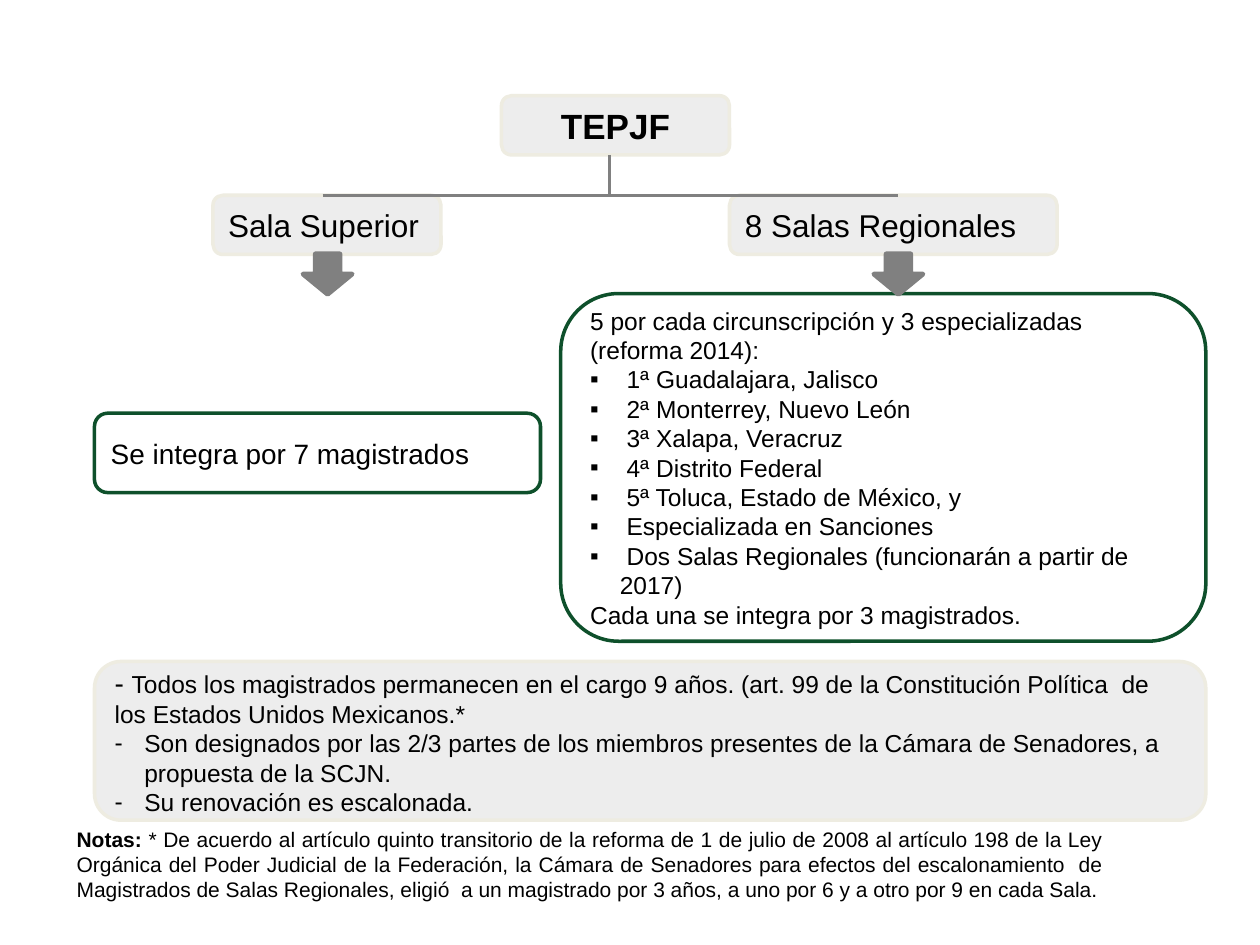
from lxml import etree
from pptx import Presentation
from pptx.dml.color import RGBColor
from pptx.enum.shapes import MSO_CONNECTOR, MSO_SHAPE
from pptx.enum.text import MSO_ANCHOR, PP_ALIGN
from pptx.oxml.ns import qn
from pptx.util import Inches, Pt

ROUNDED, ARROW = MSO_SHAPE.ROUNDED_RECTANGLE, MSO_SHAPE.RIGHT_ARROW
STRAIGHT = MSO_CONNECTOR.STRAIGHT
MIDDLE = MSO_ANCHOR.MIDDLE
LEFT, CENTER, JUSTIFY = PP_ALIGN.LEFT, PP_ALIGN.CENTER, PP_ALIGN.JUSTIFY
GRAY, PALE, CREAM, WHITE, GREEN = "808080", "DDDDDD", "EEECE1", "FFFFFF", "0E502B"

prs = Presentation()
prs.slide_width, prs.slide_height = Inches(10), Inches(7.5)
slide = prs.slides.add_slide(prs.slide_layouts[6])
COL, ROW = prs.slide_width / 100, prs.slide_height / 75
HANGING = int(2.36 * COL)


def rgb(code):
    return RGBColor.from_string(code)


def write(frame, paragraphs, size, align=LEFT):
    """Fill a frame with (bullet, runs) pairs; each run is (text, own font settings)."""
    frame.word_wrap = True
    for i, (bullet, runs) in enumerate(paragraphs):
        paragraph = frame.paragraphs[0] if i == 0 else frame.add_paragraph()
        paragraph.alignment = align
        if bullet:
            properties = paragraph._p.get_or_add_pPr()
            properties.set("marL", str(HANGING))
            properties.set("indent", str(-HANGING))
            etree.SubElement(properties, qn("a:buFont"), typeface="Arial")
            etree.SubElement(properties, qn("a:buChar"), char=bullet)
        paragraph.font.name, paragraph.font.size = "Arial", Pt(size)
        paragraph.font.color.rgb = rgb("000000")
        for text, own in runs:
            run = paragraph.add_run()
            run.text = text
            for setting, value in own.items():
                setattr(run.font, setting, value)


regional_rooms = [
    " 1ª Guadalajara, Jalisco",
    " 2ª Monterrey, Nuevo León",
    " 3ª Xalapa, Veracruz",
    " 4ª Distrito Federal",
    " 5ª Toluca, Estado de México, y",
    " Especializada en Sanciones",
    " Dos Salas Regionales (funcionarán a partir de 2017)",
]
regional_detail = [
    (None, [("5 por cada circunscripción y 3 especializadas (reforma 2014):", {})]),
    *[("▪", [(room, {})]) for room in regional_rooms],
    (None, [("Cada una se integra por 3 magistrados.", {})]),
]
tenure = [
    (None, [("- ", {"size": Pt(16)}),
            ("Todos los magistrados permanecen en el cargo 9 años. (art. 99 de la "
             "Constitución Política  de los Estados Unidos Mexicanos.*", {})]),
    ("-", [("Son designados por las 2/3 partes de los miembros presentes de la Cámara "
            "de Senadores, a propuesta de la SCJN.", {})]),
    ("-", [("Su renovación es escalonada.", {})]),
]

# Boxes: column, row, width, height, fill, outline, size, alignment, paragraphs
boxes = [
    (57.9, 15.5, 26, 4.7, PALE, CREAM, 18, LEFT, [(None, [("8 Salas Regionales", {})])]),
    (44.5, 23.3, 51.2, 27.6, WHITE, GREEN, 14, LEFT, regional_detail),
    (7.5, 32.8, 35.4, 6.3, WHITE, GREEN, 16, LEFT,
     [(None, [("Se integra por 7 magistrados", {})])]),
    (16.9, 15.5, 18.1, 4.7, PALE, CREAM, 18, LEFT, [(None, [("Sala Superior", {})])]),
    (7.5, 52.5, 88.2, 12.6, PALE, CREAM, 14, LEFT, tenure),
    (39.8, 7.6, 18.1, 4.7, PALE, CREAM, 20, CENTER, [(None, [("TEPJF", {"bold": True})])]),
]
for col, row, cols, rows, fill, outline, size, align, paragraphs in boxes:
    box = slide.shapes.add_shape(
        ROUNDED, int(col * COL), int(row * ROW), int(cols * COL), int(rows * ROW))
    box.shadow.inherit = False
    box.fill.solid()
    box.fill.fore_color.rgb = rgb(fill)
    fill_color = box._element.spPr.find(qn("a:solidFill")).find(qn("a:srgbClr"))
    etree.SubElement(fill_color, qn("a:alpha"), val="50000")
    box.line.color.rgb = rgb(outline)
    box.line.width = Pt(2)
    box.text_frame.vertical_anchor = MIDDLE
    write(box.text_frame, paragraphs, size, align)

# Arrows from each room down to its detail
for col in (24.4, 69.7):
    arrow = slide.shapes.add_shape(
        ARROW, int(col * COL), int(19.8 * ROW), int(3.2 * COL), int(3.9 * ROW))
    arrow.rotation = 90
    arrow.shadow.inherit = False
    arrow.fill.solid()
    arrow.fill.fore_color.rgb = rgb(GRAY)
    arrow.line.color.rgb = rgb(GRAY)
    arrow.line.width = Pt(2.75)

# Branch over both rooms, and the trunk down from the court
for start_col, start_row, end_col, end_row in [(25.6, 15.5, 71.3, 15.5),
                                               (48.4, 12.3, 48.4, 15.5)]:
    link = slide.shapes.add_connector(
        STRAIGHT, int(start_col * COL), int(start_row * ROW),
        int(end_col * COL), int(end_row * ROW))
    link.line.color.rgb = rgb(GRAY)
    link.line.width = Pt(1.5)
    etree.SubElement(link._element.spPr, qn("a:effectLst"))

notes = slide.shapes.add_textbox(
    int(5.1 * COL), int(65.1 * ROW), int(83.5 * COL), int(7.1 * ROW))
write(notes.text_frame, [(None, [
    ("Notas:", {"bold": True}),
    (" * De acuerdo al artículo quinto transitorio de la reforma de 1 de julio de 2008 al "
     "artículo 198 de la Ley Orgánica del Poder Judicial de la Federación, la Cámara de "
     "Senadores para efectos del escalonamiento  de Magistrados de Salas Regionales, "
     "eligió  a un magistrado por 3 años, a uno por 6 y a otro por 9 en cada Sala.", {}),
])], 12, JUSTIFY)

prs.save("out.pptx")
